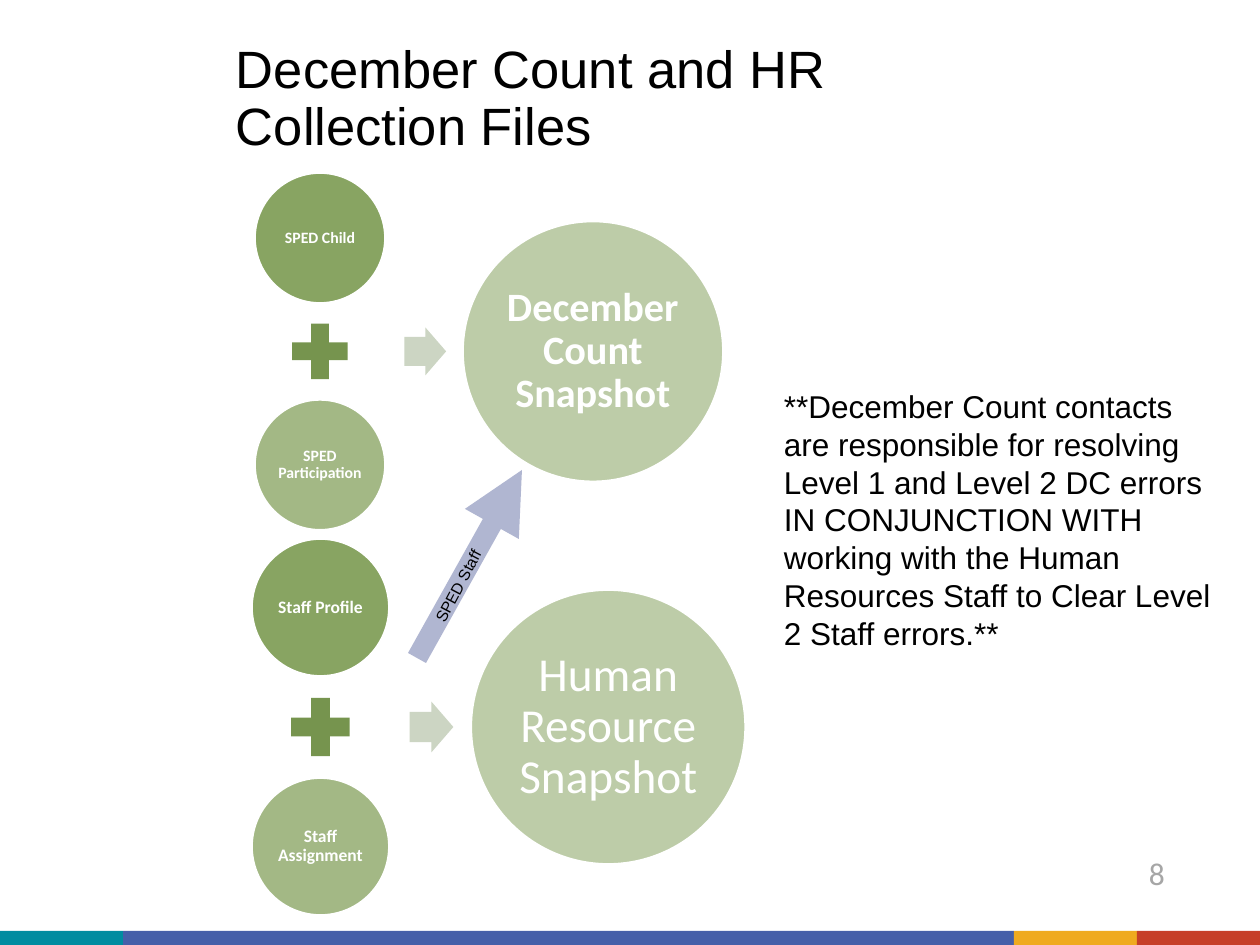
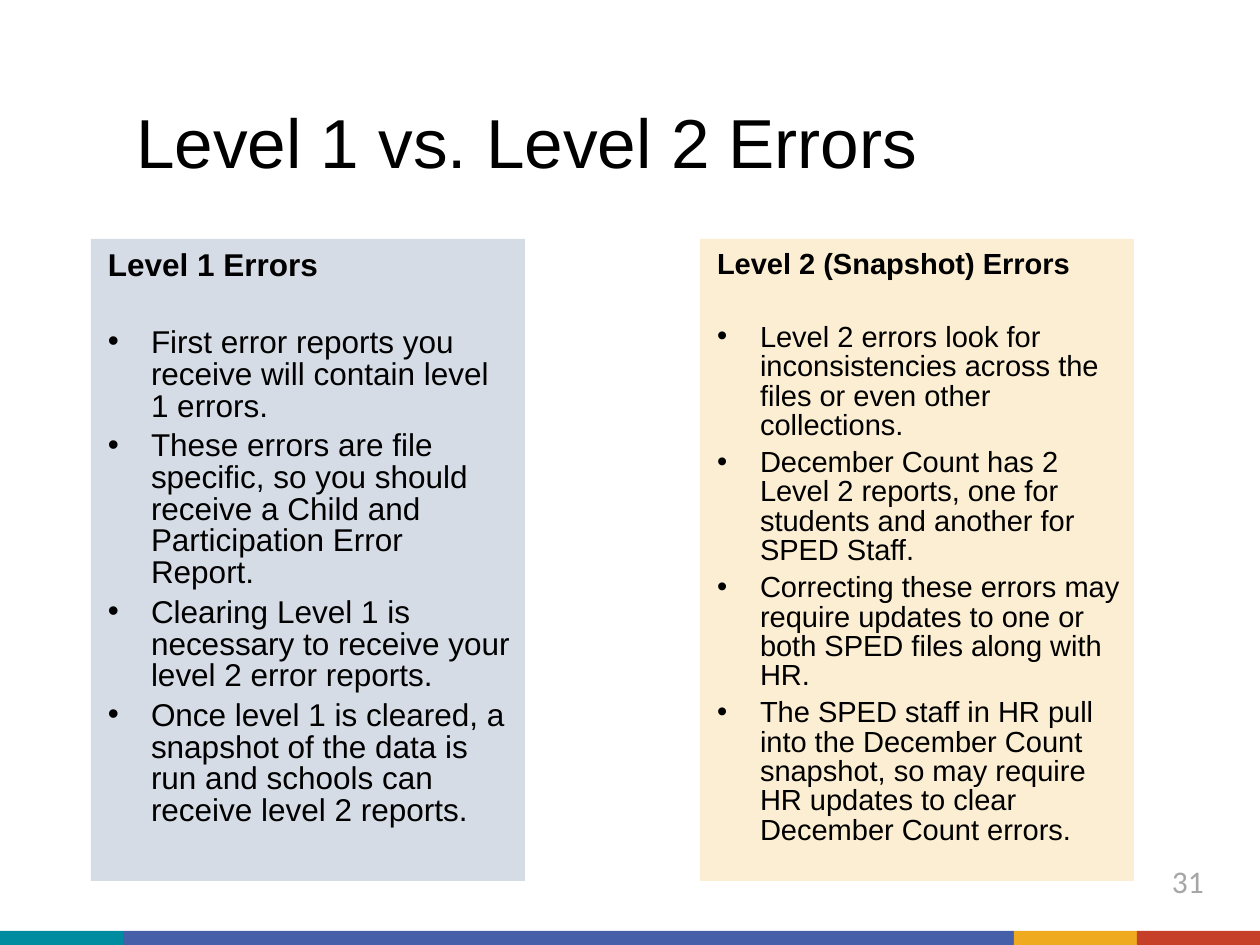
import lxml.etree
import pptx
import pptx.dml.color
import pptx.enum.shapes
import pptx.enum.text
import pptx.oxml.ns
import pptx.util

PX = 914400 / 126
SHAPE = pptx.enum.shapes.MSO_SHAPE
ALIGN = pptx.enum.text.PP_ALIGN
ANCHOR = pptx.enum.text.MSO_ANCHOR

SLIDE_WIDTH, SLIDE_HEIGHT = 1260, 945
BLACK, WHITE, NUMBER_GREY = "000000", "FFFFFF", "A6A6A6"
CIRCLE_GREEN, PLUS_GREEN, ARROW_GREEN = "7C9B52", "76944E", "CCD5C3"
STAFF_ARROW_BLUE = "B0B6D1"
LEVEL_1_BLUE, LEVEL_2_CREAM = "D6DCE5", "FCEED2"
BAND_TOP = 931
BAND_STOPS = [(0, "008CA0"), (123, "455FA9"), (1014, "EFAA1F"), (1137, "C63F28")]

LEVEL_1_POINTS = [
    "First error reports you receive will contain level 1 errors.",
    "These errors are file specific, so you should receive a Child and "
    "Participation Error Report.",
    "Clearing Level 1 is necessary to receive your level 2 error reports.",
    "Once level 1 is cleared, a snapshot of the data is run and schools can "
    "receive level 2 reports.",
]
LEVEL_2_POINTS = [
    "Level 2 errors look for inconsistencies across the files or even other "
    "collections.",
    "December Count has 2 Level 2 reports, one for students and another for "
    "SPED Staff.",
    "Correcting these errors may require updates to one or both SPED files "
    "along with HR.",
    "The SPED staff in HR pull into the December Count snapshot, so may "
    "require HR updates to clear December Count errors.",
]


def emu(*lengths):
    return [pptx.util.Emu(round(length * PX)) for length in lengths]


def rgb(color):
    return pptx.dml.color.RGBColor.from_string(color)


def add_xml(parent, tag, **attributes):
    return lxml.etree.SubElement(parent, pptx.oxml.ns.qn(tag), attributes)


def set_frame(shape, inset=13, anchor=ANCHOR.TOP, inset_y=None):
    frame = shape.text_frame
    frame.word_wrap = True
    frame.auto_size = pptx.enum.text.MSO_AUTO_SIZE.NONE
    frame.vertical_anchor = anchor
    frame.margin_left, frame.margin_right = emu(inset, inset)
    inset_y = inset if inset_y is None else inset_y
    frame.margin_top, frame.margin_bottom = emu(inset_y, inset_y)
    return frame


def write(paragraph, text, size=18, font="Arial", color=BLACK, bold=False,
          align=ALIGN.LEFT, line_spacing=1.0, space_before=0,
          indent=0, hanging=0, bullet=False):
    properties = paragraph._p.get_or_add_pPr()
    margin, first_line = emu(indent, -hanging)
    properties.set("marL", str(margin))
    properties.set("indent", str(first_line))
    if bullet:
        add_xml(properties, "a:buFont", typeface="Arial")
        add_xml(properties, "a:buChar", char="•")
    paragraph.alignment = align
    paragraph.line_spacing = line_spacing
    paragraph.space_before = pptx.util.Pt(space_before)
    run = paragraph.add_run()
    run.text = text
    run.font.name = font
    run.font.size = pptx.util.Pt(size)
    run.font.bold = bold
    run.font.color.rgb = rgb(color)


def add_label(slide, box, text, inset=13, inset_y=None, rotation=0, **style):
    label = slide.shapes.add_textbox(*emu(*box))
    label.rotation = rotation
    write(set_frame(label, inset, inset_y=inset_y).paragraphs[0], text, **style)


def add_filled(slide, kind, box, color, opacity=100, outline=None):
    shape = slide.shapes.add_shape(kind, *emu(*box))
    shape.shadow.inherit = False
    shape.fill.solid()
    shape.fill.fore_color.rgb = rgb(color)
    if opacity < 100:
        fill_color = shape.element.spPr.find(".//" + pptx.oxml.ns.qn("a:srgbClr"))
        add_xml(fill_color, "a:alpha", val=str(opacity * 1000))
    if outline:
        shape.line.color.rgb = rgb(outline)
        shape.line.width = pptx.util.Pt(1)
    else:
        shape.line.fill.background()
    return shape


def add_circle(slide, left, top, diameter, text, opacity, inset=2, **style):
    circle = add_filled(slide, SHAPE.OVAL, (left, top, diameter, diameter),
                        CIRCLE_GREEN, opacity, outline=WHITE)
    write(set_frame(circle, inset, ANCHOR.MIDDLE).paragraphs[0], text,
          font="Calibri", color=WHITE, align=ALIGN.CENTER, line_spacing=0.9, **style)


def add_snapshot_flow(slide, left, top, unit, files, file_size, snapshot, **style):
    """Two file circles joined by a plus, with an arrow to a circle twice as wide."""
    pitch = 1.745 * unit
    middle = top + (pitch + unit) / 2
    for row, (name, opacity) in enumerate(zip(files, (90, 70))):
        add_circle(slide, left, top + row * pitch, unit, name, opacity,
                   size=file_size, bold=True)
    plus = 0.58 * unit
    add_filled(slide, SHAPE.MATH_PLUS,
               (left + (unit - plus) / 2, middle - plus / 2, plus, plus), PLUS_GREEN)
    arrow_height = 0.37 * unit
    arrow = add_filled(slide, SHAPE.RIGHT_ARROW,
                       (left + 1.15 * unit, middle - arrow_height / 2,
                        0.32 * unit, arrow_height), ARROW_GREEN)
    arrow.adjustments[0] = 0.6
    add_circle(slide, left + 1.6 * unit, middle - unit, 2 * unit, snapshot, 50,
               inset=4, **style)


def add_staff_arrow(slide, start, end):
    arrow = slide.shapes.add_connector(
        pptx.enum.shapes.MSO_CONNECTOR.STRAIGHT, *emu(*start, *end))
    arrow.line.color.rgb = rgb(STAFF_ARROW_BLUE)
    arrow.line.width = pptx.util.Pt(11.75)
    add_xml(arrow.line._get_or_add_ln(), "a:tailEnd", type="triangle")
    add_xml(arrow._element.spPr, "a:effectLst")


def add_error_panel(slide, left, color, heading, points, size, heading_gap):
    panel = add_filled(slide, SHAPE.RECTANGLE, (left, 239, 434, 642), color)
    frame = set_frame(panel, 12)
    write(frame.paragraphs[0], heading, size=size, bold=True, indent=5,
          line_spacing=0.84)
    for number, point in enumerate(points):
        write(frame.add_paragraph(), point, size=size, bullet=True, indent=48,
              hanging=43, line_spacing=0.84,
              space_before=4.5 if number else heading_gap)


def add_slide(deck, title, title_box, title_size, title_inset, number, number_box):
    slide = deck.slides.add_slide(deck.slide_layouts[5])
    ends = [start for start, _ in BAND_STOPS[1:]] + [SLIDE_WIDTH]
    for (start, color), end in zip(BAND_STOPS, ends):
        add_filled(slide, SHAPE.RECTANGLE,
                   (start, BAND_TOP, end - start, SLIDE_HEIGHT - BAND_TOP), color)
    heading = slide.shapes.title
    heading.left, heading.top, heading.width, heading.height = emu(*title_box)
    frame = set_frame(heading, title_inset, ANCHOR.BOTTOM)
    write(frame.paragraphs[0], title, size=title_size, line_spacing=0.9)
    add_label(slide, number_box, number, inset=title_inset, font="Calibri",
              color=NUMBER_GREY)
    return slide


def build_collection_files(deck):
    slide = add_slide(deck, "December Count and HR Collection Files",
                      (227, 48, 668, 118), 30, 9, "8", (1140, 845, 57, 43))
    add_snapshot_flow(slide, 255, 173, 130, ["SPED Child", "SPED Participation"], 9,
                      "December Count Snapshot", size=23, bold=True)
    add_snapshot_flow(slide, 252, 539, 137, ["Staff Profile", "Staff Assignment"], 10,
                      "Human Resource Snapshot", size=27)
    add_staff_arrow(slide, (417, 658), (522, 470))
    add_label(slide, (391, 546, 160, 32), "SPED Staff", inset_y=6,
              rotation=297.8, size=9)
    add_label(slide, (771, 381, 464, 280),
              "**December Count contacts are responsible for resolving Level 1 and "
              "Level 2 DC errors IN CONJUNCTION WITH working with the Human Resources "
              "Staff to Clear Level 2 Staff errors.**", inset_y=6)


def build_error_levels(deck):
    slide = add_slide(deck, "Level 1 vs. Level 2 Errors",
                      (123, 38, 891, 158), 39.6, 13, "31", (1159, 849, 76, 64))
    add_error_panel(slide, 91, LEVEL_1_BLUE, "Level 1 Errors",
                    LEVEL_1_POINTS, 18, 26)
    add_error_panel(slide, 700, LEVEL_2_CREAM, "Level 2 (Snapshot) Errors",
                    LEVEL_2_POINTS, 16.6, 25)


def main():
    deck = pptx.Presentation()
    deck.slide_width, deck.slide_height = emu(SLIDE_WIDTH, SLIDE_HEIGHT)
    build_collection_files(deck)
    build_error_levels(deck)
    deck.save("out.pptx")


if __name__ == "__main__":
    main()
